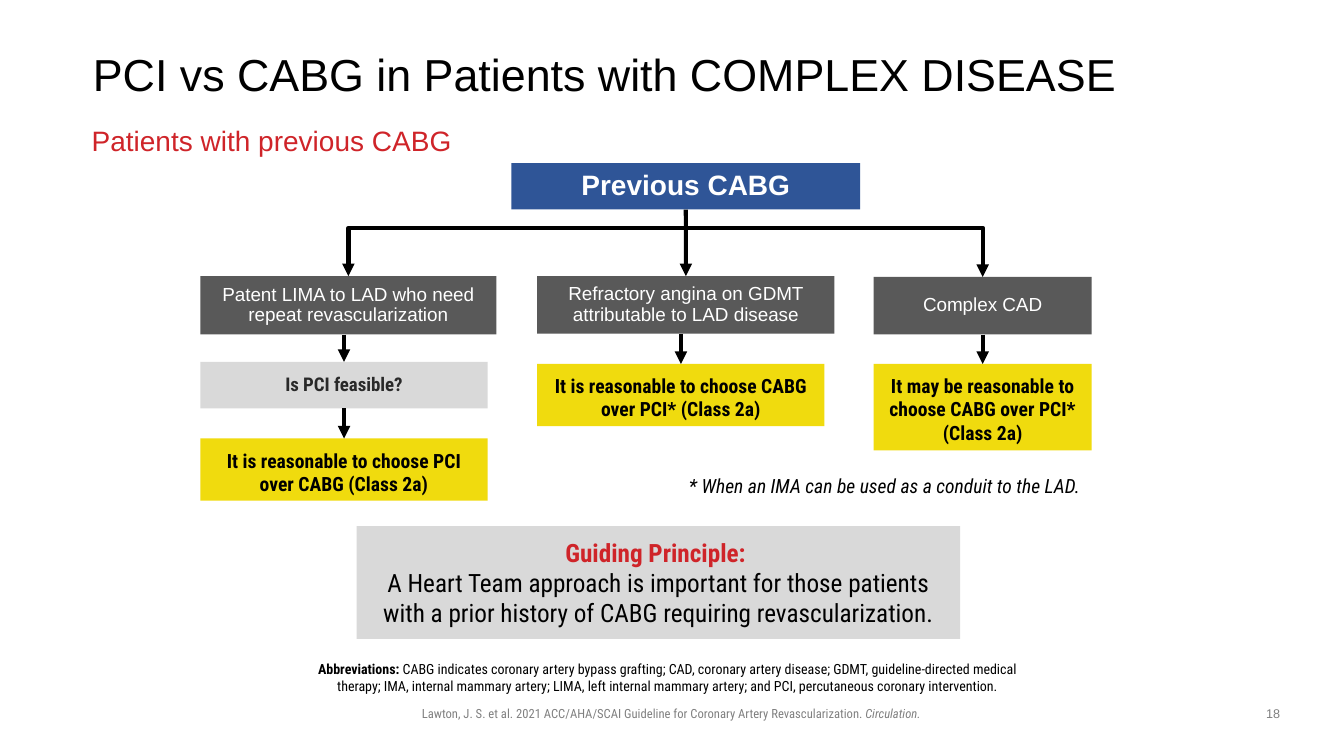
from dataclasses import dataclass

from lxml import etree
from pptx import Presentation
from pptx import util as u
from pptx.dml.color import RGBColor
from pptx.enum import shapes, text
from pptx.oxml import ns

SANS, SLIM = "Arial", "Roboto Condensed"
BLACK, WHITE, RED, GRAY = "000000", "FFFFFF", "CF2429", "808080"
BLUE, SLATE, YELLOW, PALE = "2F5597", "595959", "F0DB0E", "D9D9D9"
LEFT, MID, RIGHT = text.PP_ALIGN.LEFT, text.PP_ALIGN.CENTER, text.PP_ALIGN.RIGHT
TOP, HALF = text.MSO_ANCHOR.TOP, text.MSO_ANCHOR.MIDDLE
FLUSH, PADDED, ROOMY = (0, 0, 0, 0), (0.25, 0.13, 0.25, 0.13), (0.25, 0.25, 0.25, 0.13)


@dataclass(frozen=True)
class Run:
    """Words with their own format; None keeps the format of the box."""
    words: str
    bold: bool | None = None
    slant: bool | None = None
    color: str | None = None
    split: bool = False  # line break after the words


@dataclass(frozen=True)
class Look:
    fill: str
    ink: str
    size: float
    font: str
    bold: bool
    pad: tuple = FLUSH
    hold: text.MSO_ANCHOR = HALF
    lead: float | None = 0.9


@dataclass(frozen=True)
class Node:
    words: tuple
    place: tuple
    look: Look


@dataclass(frozen=True)
class Label:
    runs: tuple
    place: tuple
    style: dict


def paint(code: str) -> RGBColor:
    return RGBColor.from_string(code)


def write(frame, lines, *, size: float, font: str = SLIM, color: str = BLACK,
          bold: bool = False, slant: bool = False, align=LEFT, pad=PADDED,
          hold=TOP, lead: float | None = None) -> None:
    """Fill a text frame; each line is a paragraph made of runs."""
    frame.word_wrap = True
    frame.vertical_anchor = hold
    (frame.margin_left, frame.margin_top,
     frame.margin_right, frame.margin_bottom) = map(u.Cm, pad)
    for i, line in enumerate(lines):
        para = frame.add_paragraph() if i else frame.paragraphs[0]
        para.alignment = align
        if lead:
            para.line_spacing = lead
        for part in line:
            run = para.add_run()
            run.text = part.words
            face = run.font
            face.name, face.size = font, u.Pt(size)
            face.bold = bold if part.bold is None else part.bold
            face.italic = slant if part.slant is None else part.slant
            face.color.rgb = paint(part.color or color)
            if part.split:
                para.add_line_break()


def block(slide, place: tuple, fill: str):
    box = slide.shapes.add_shape(shapes.MSO_SHAPE.RECTANGLE, *map(u.Cm, place))
    box.shadow.inherit = False
    box.fill.solid()
    box.fill.fore_color.rgb = paint(fill)
    box.line.fill.background()
    return box


def draw(slide, node: Node):
    look = node.look
    box = block(slide, node.place, look.fill)
    write(box.text_frame, [[Run(words)] for words in node.words], size=look.size,
          font=look.font, color=look.ink, bold=look.bold, align=MID,
          pad=look.pad, hold=look.hold, lead=look.lead)
    return box


def stroke(shape, tip: str) -> None:
    """Give a thick black line an arrow at headEnd or tailEnd."""
    shape.line.color.rgb = paint(BLACK)
    shape.line.width = u.Pt(3)
    etree.SubElement(shape.line._get_or_add_ln(), ns.qn("a:" + tip), type="triangle")


def centre(box) -> int:
    return box.left + box.width // 2


def link(slide, upper, lower) -> None:
    """Drop an arrow onto the middle of the lower box."""
    x = centre(lower)
    line = slide.shapes.add_connector(shapes.MSO_CONNECTOR.STRAIGHT, x,
                                      upper.top + upper.height, x, lower.top)
    if abs(centre(upper) - x) < u.Cm(0.02):
        line.begin_connect(upper, 2)
    line.end_connect(lower, 0)
    stroke(line, "tailEnd")
    etree.SubElement(line._element.spPr, ns.qn("a:effectLst"))


def branch(slide, trunk, lower) -> None:
    """Draw a bent arrow from the trunk to the top of a box."""
    x, bar = centre(lower), u.Cm(5.74)
    path = slide.shapes.build_freeform(x, lower.top)
    path.add_line_segments([(x, bar), (centre(trunk), bar)], close=False)
    bend = path.convert_to_shape()
    bend.shadow.inherit = False
    bend.fill.background()
    stroke(bend, "headEnd")


ROOT = Look(BLUE, WHITE, 20, SANS, True)
CASE = Look(SLATE, WHITE, 13.5, SANS, False)
ASK = Look(PALE, "292929", 13.5, SLIM, True)
ADVICE = Look(YELLOW, BLACK, 14, SLIM, True, ROOMY, TOP, None)

START = Node(("Previous CABG",), (12.89, 4.11, 8.79, 1.17), ROOT)
CHAINS = (
    (Node(("Patent LIMA to LAD who need repeat revascularization",),
          (5.05, 6.96, 7.46, 1.47), CASE),
     Node(("Is PCI feasible?",), (5.05, 9.12, 7.24, 1.17), ASK),
     Node(("It is reasonable to choose PCI over CABG (Class 2a)",),
          (5.05, 11.05, 7.24, 1.57), ADVICE)),
    (Node(("Refractory angina on GDMT attributable to LAD disease",),
          (13.54, 6.96, 7.49, 1.45), CASE),
     Node(("It is reasonable to choose CABG over PCI* (Class 2a)",),
          (13.54, 9.17, 7.24, 1.57), ADVICE)),
    (Node(("Complex CAD",), (22.02, 6.98, 5.49, 1.45), CASE),
     Node(("It may be reasonable to choose CABG over PCI*", "(Class 2a)"),
          (22.02, 9.17, 5.49, 2.18), ADVICE)),
)

LABELS = (
    Label((Run("PCI vs CABG in Patients with COMPLEX DISEASE"),),
          (2.34, 1.02, 29.21, 1.83),
          dict(size=32, font=SANS, pad=FLUSH, hold=HALF, lead=0.9)),
    Label((Run("Patients with previous CABG"),), (2.06, 3.07, 24.03, 1.02),
          dict(size=20, font=SANS, color=RED, lead=0.9)),
    Label((Run("* When an IMA can be used as a conduit to the LAD."),),
          (12.09, 11.81, 15.39, 0.86), dict(size=14, slant=True, align=RIGHT)),
    Label((Run("Guiding Principle: ", bold=True, color=RED, split=True),
           Run("A Heart Team approach is important for those patients with a "
               "prior history of CABG requiring revascularization.")),
          (9.19, 13.41, 14.81, 2.57), dict(size=18, align=MID)),
    Label((Run("Abbreviations: ", bold=True),
           Run("CABG indicates coronary artery bypass grafting; CAD, coronary "
               "artery disease; GDMT, guideline-directed medical therapy; IMA, "
               "internal mammary artery; LIMA, left internal mammary artery; "
               "and PCI, percutaneous coronary intervention.")),
          (7.62, 16.51, 18.64, 0.76),
          dict(size=10, align=MID, pad=(0, 0.13, 0.25, 0.13))),
    Label((Run("Lawton, J. S. et al. 2021 ACC/AHA/SCAI Guideline for Coronary "
               "Artery Revascularization. "), Run("Circulation.", slant=True)),
          (8.05, 17.65, 17.73, 0.64), dict(size=9, color=GRAY, align=MID)),
    Label((Run("18"),), (31.55, 17.65, 1.07, 0.66),
          dict(size=9, font=SANS, color=GRAY, align=MID)),
)


def main() -> None:
    deck = Presentation()
    deck.slide_width, deck.slide_height = u.Cm(33.87), u.Cm(19.05)
    slide = deck.slides.add_slide(deck.slide_layouts[6])

    block(slide, (8.99, 13.26, 15.21, 2.84), PALE)
    for label in LABELS:
        box = slide.shapes.add_textbox(*map(u.Cm, label.place))
        write(box.text_frame, [label.runs], **label.style)

    trunk = draw(slide, START)
    chains = [[draw(slide, node) for node in chain] for chain in CHAINS]
    for chain in chains:
        for upper, lower in zip(chain, chain[1:]):
            link(slide, upper, lower)
    first, middle, last = (chain[0] for chain in chains)
    link(slide, trunk, middle)
    for case in (first, last):
        branch(slide, trunk, case)
    deck.save("out.pptx")


if __name__ == "__main__":
    main()
